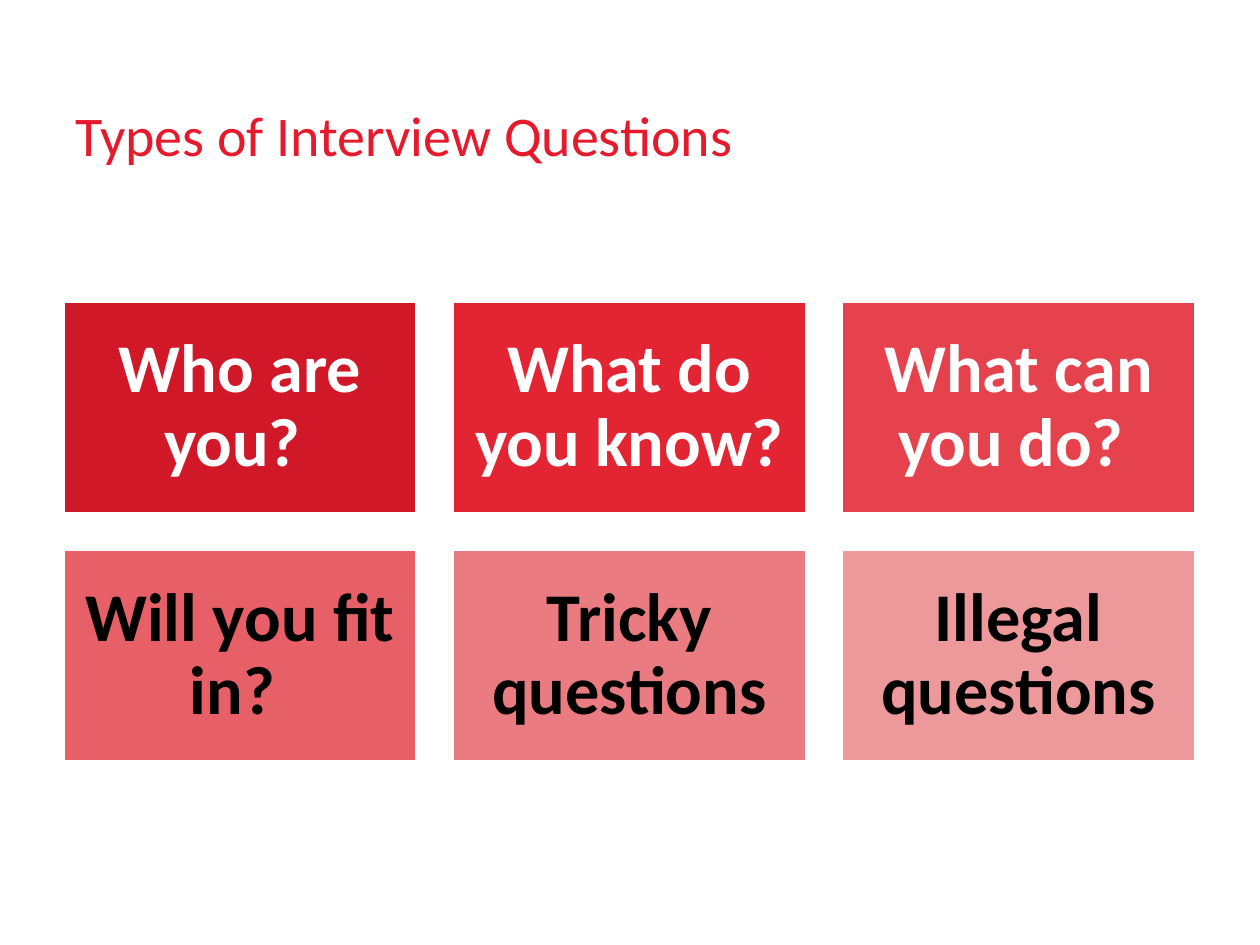
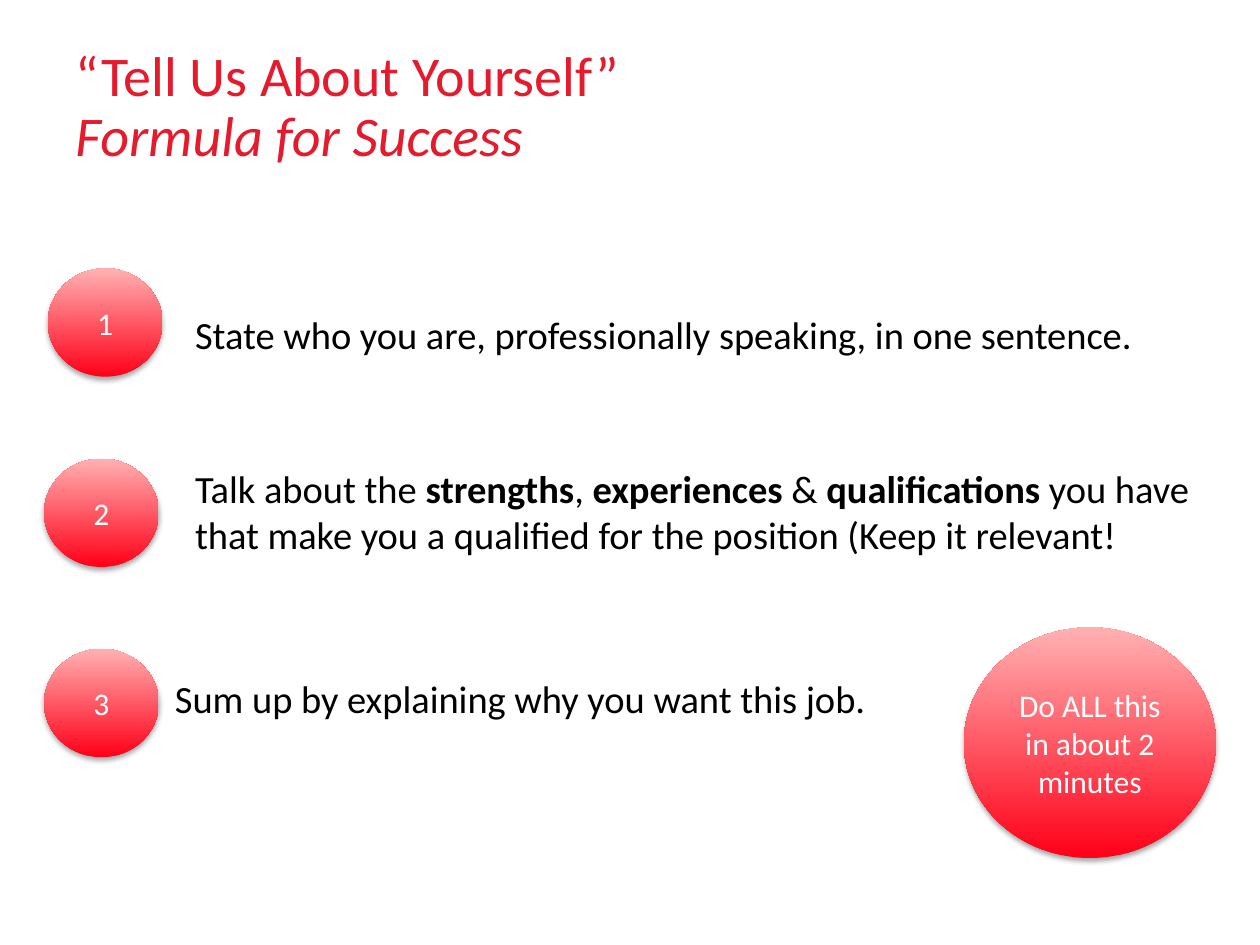
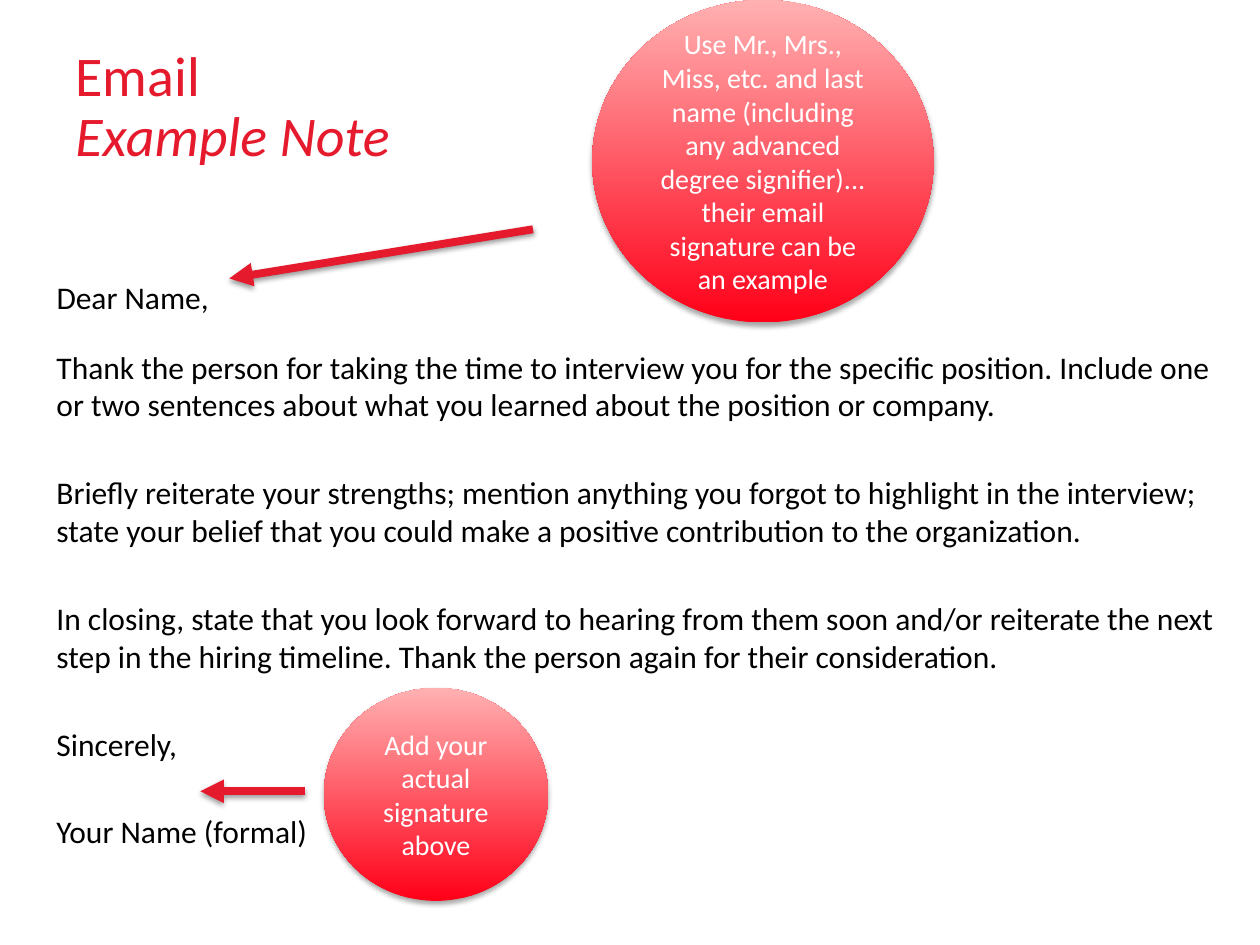
from dataclasses import dataclass

import pptx
import pptx.util
from lxml import etree
from pptx.dml.color import RGBColor
from pptx.enum.shapes import MSO_CONNECTOR, MSO_SHAPE
from pptx.enum.text import MSO_ANCHOR, PP_ALIGN
from pptx.oxml.ns import qn
from pptx.util import Inches


@dataclass(frozen=True)
class Theme:
    font: str = "Calibri"
    red: str = "E51A2D"
    white: str = "FFFFFF"
    black: str = "000000"
    bubble_bottom: str = "FF0018"
    bubble_top: str = "FFB1B2"
    title_size: int = 32
    title_leading: int = 34
    tile_size: int = 39
    step_size: int = 22
    bubble_size: int = 18
    note_size: int = 16
    email_size: int = 18
    email_gap: float = 28.6


THEME = Theme()


# Text and effects

def write_paragraph(paragraph, runs, size, color, bold=None):
    """Write runs given as one string or as (text, style) pairs."""
    if isinstance(runs, str):
        runs = [(runs, "")]
    for text, style in runs:
        run = paragraph.add_run()
        run.text = text
        if style == "bold":
            run.font.bold = True
    paragraph.font.name = THEME.font
    paragraph.font.size = pptx.util.Pt(size)
    paragraph.font.color.rgb = RGBColor.from_string(color)
    if bold is not None:
        paragraph.font.bold = bold


def add_text(slide, left, top, width, height, paragraphs, size, gap=0):
    box = slide.shapes.add_textbox(Inches(left), Inches(top), Inches(width), Inches(height))
    frame = box.text_frame
    frame.word_wrap = True
    for index, runs in enumerate(paragraphs):
        paragraph = frame.add_paragraph() if index else frame.paragraphs[0]
        if index:
            paragraph.space_before = pptx.util.Pt(gap)
        write_paragraph(paragraph, runs, size, THEME.black)


def add_drop_shadow(shape, opacity, distance):
    properties = shape._element.spPr
    effects = properties.find(qn("a:effectLst"))
    if effects is None:
        effects = etree.SubElement(properties, qn("a:effectLst"))
    shadow = etree.SubElement(
        effects, qn("a:outerShdw"), blurRad=str(pptx.util.Pt(3.1)),
        dist=str(pptx.util.Pt(distance)), dir="5400000", rotWithShape="0")
    color = etree.SubElement(shadow, qn("a:srgbClr"), val=THEME.black)
    etree.SubElement(color, qn("a:alpha"), val=str(opacity * 1000))


# Slide elements

def add_title(slide, text, subtitle=None):
    box = slide.shapes.add_textbox(Inches(0.5), Inches(0.13), Inches(7.15), Inches(1.25))
    frame = box.text_frame
    frame.word_wrap = True
    frame.vertical_anchor = MSO_ANCHOR.BOTTOM
    paragraph = frame.paragraphs[0]
    paragraph.line_spacing = pptx.util.Pt(THEME.title_leading)
    write_paragraph(paragraph, text, THEME.title_size, THEME.red)
    if subtitle:
        paragraph.add_line_break()
        run = paragraph.add_run()
        run.text = subtitle
        run.font.italic = True


def add_centered_shape(slide, kind, left, top, width, height, text, size, color, bold=None):
    shape = slide.shapes.add_shape(
        kind, Inches(left), Inches(top), Inches(width), Inches(height))
    shape.shadow.inherit = False
    frame = shape.text_frame
    frame.word_wrap = True
    frame.vertical_anchor = MSO_ANCHOR.MIDDLE
    paragraph = frame.paragraphs[0]
    paragraph.alignment = PP_ALIGN.CENTER
    write_paragraph(paragraph, text, size, color, bold)
    return shape


def add_tile(slide, left, top, width, height, text, fill, color):
    tile = add_centered_shape(slide, MSO_SHAPE.RECTANGLE, left, top, width, height,
                              text, THEME.tile_size, color, bold=True)
    tile.fill.solid()
    tile.fill.fore_color.rgb = RGBColor.from_string(fill)
    tile.line.color.rgb = RGBColor.from_string(THEME.white)
    tile.line.width = pptx.util.Pt(2)
    frame = tile.text_frame
    frame.margin_left = frame.margin_right = Inches(0.16)
    frame.margin_top = frame.margin_bottom = Inches(0.16)
    frame.paragraphs[0].line_spacing = 0.9


def add_bubble(slide, left, top, width, height, text, size):
    bubble = add_centered_shape(slide, MSO_SHAPE.OVAL, left, top, width, height,
                                text, size, THEME.white)
    bubble.fill.gradient()
    bubble.fill.gradient_angle = 90
    for stop, color in zip(bubble.fill.gradient_stops,
                           (THEME.bubble_bottom, THEME.bubble_top)):
        stop.color.rgb = RGBColor.from_string(color)
    bubble.line.fill.background()
    add_drop_shadow(bubble, opacity=35, distance=1.8)


def add_arrow(slide, start_x, start_y, end_x, end_y):
    arrow = slide.shapes.add_connector(
        MSO_CONNECTOR.STRAIGHT, Inches(start_x), Inches(start_y), Inches(end_x), Inches(end_y))
    arrow.line.color.rgb = RGBColor.from_string(THEME.red)
    arrow.line.width = pptx.util.Pt(4.5)
    etree.SubElement(arrow.line._get_or_add_ln(), qn("a:tailEnd"), type="triangle")
    add_drop_shadow(arrow, opacity=38, distance=1.6)


# Slides

def build_question_types(slide):
    add_title(slide, "Types of Interview Questions")
    tiles = [
        ("Who are you? ", "D01829", THEME.white),
        ("What do you know? ", "E32433", THEME.white),
        ("What can you do? ", "E5424D", THEME.white),
        ("Will you fit in? ", "E75F67", THEME.black),
        ("Tricky questions", "EA7C81", THEME.black),
        ("Illegal questions", "ED989B", THEME.black),
    ]
    columns, width, height, gap = 3, 2.81, 1.69, 0.28
    for index, (text, fill, color) in enumerate(tiles):
        row, column = divmod(index, columns)
        add_tile(slide, 0.5 + column * (width + gap), 2.39 + row * (height + gap),
                 width, height, text, fill, color)


def build_success_formula(slide):
    add_title(slide, "“Tell Us About Yourself”", "Formula for Success")
    qualifications = [
        ("Talk about the ", ""), ("strengths", "bold"), (", ", ""),
        ("experiences", "bold"), (" & ", ""), ("qualifications", "bold"),
        (" you have that make you a qualified for the position (Keep it relevant!", ""),
    ]
    # Bubble left, then left, top, width and height of the sentence
    steps = [
        (0.38, 1.45, 2.42, 8.2, 0.58,
         "State who you are, professionally speaking, in one sentence."),
        (0.35, 1.45, 3.64, 8.2, 0.86, qualifications),
        (0.35, 1.29, 5.31, 5.91, 0.58, "Sum up by explaining why you want this job."),
    ]
    for index, (bubble_left, left, top, width, height, sentence) in enumerate(steps):
        add_bubble(slide, bubble_left, 2.13 + index * 1.51, 0.91, 0.86,
                   str(index + 1), THEME.bubble_size)
        add_text(slide, left, top, width, height, [sentence], THEME.step_size)
    add_bubble(slide, 7.65, 4.98, 2, 1.83, "Do ALL this in about 2 minutes", THEME.bubble_size)


def build_email_example(slide):
    add_title(slide, "Email", "Example Note")
    add_text(slide, 0.35, 2.16, 1.89, 0.39, ["Dear Name,"], THEME.email_size)
    add_arrow(slide, 4.23, 1.82, 1.82, 2.21)
    add_bubble(slide, 4.7, 0, 2.71, 2.56,
               "Use Mr., Mrs., Miss, etc. and last name (including any advanced degree "
               "signifier)... their email signature can be an example", THEME.note_size)
    email = [
        "Thank the person for taking the time to interview you for the specific position. "
        "Include one or two sentences about what you learned about the position or company.",
        "Briefly reiterate your strengths; mention anything you forgot to highlight in the "
        "interview; state your belief that you could make a positive contribution to the "
        "organization.",
        "In closing, state that you look forward to hearing from them soon and/or reiterate "
        "the next step in the hiring timeline. Thank the person again for their consideration.",
        "Sincerely,",
        "Your Name (formal)",
    ]
    add_text(slide, 0.35, 2.71, 9.46, 4.45, email, THEME.email_size, THEME.email_gap)
    add_arrow(slide, 2.42, 6.28, 1.59, 6.28)
    add_bubble(slide, 2.57, 5.46, 1.78, 1.69, "Add your actual signature above", THEME.note_size)


def main():
    presentation = pptx.Presentation()
    presentation.slide_width = Inches(10)
    presentation.slide_height = Inches(7.5)
    blank_layout = presentation.slide_layouts[6]
    for build in (build_question_types, build_success_formula, build_email_example):
        build(presentation.slides.add_slide(blank_layout))
    presentation.save("out.pptx")


if __name__ == "__main__":
    main()
